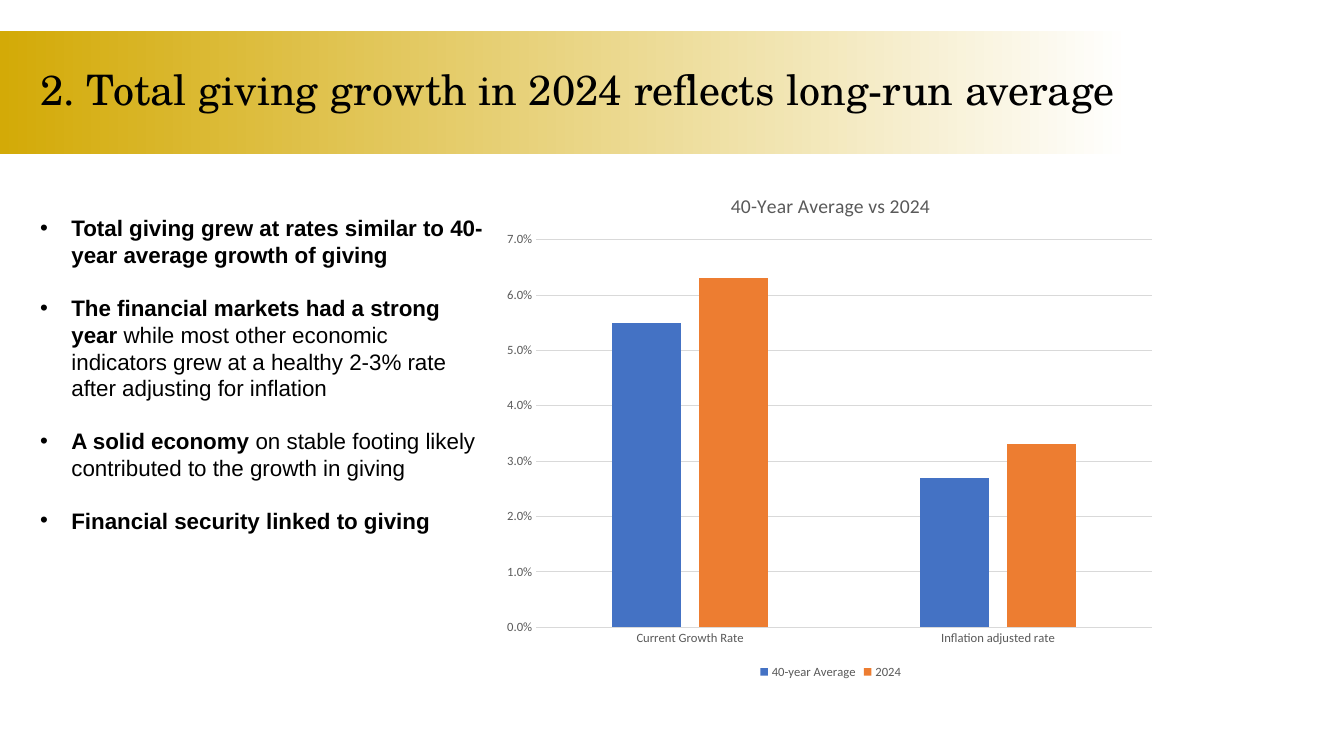
from dataclasses import dataclass

from lxml.etree import SubElement
from pptx import Presentation
from pptx.chart.data import CategoryChartData
from pptx.dml.color import RGBColor
from pptx.enum.chart import XL_CHART_TYPE as ChartType
from pptx.enum.chart import XL_LEGEND_POSITION as LegendPos
from pptx.enum.chart import XL_TICK_MARK as TickMark
from pptx.enum.shapes import MSO_SHAPE as Shape
from pptx.enum.text import MSO_ANCHOR as Anchor
from pptx.enum.text import MSO_AUTO_SIZE as AutoSize
from pptx.enum.text import PP_ALIGN as Align
from pptx.oxml import parse_xml
from pptx.oxml.ns import nsdecls, qn
from pptx.util import Cm, Pt

BLACK = RGBColor(0x00, 0x00, 0x00)
WHITE = RGBColor(0xFF, 0xFF, 0xFF)
GOLD = RGBColor(0xD3, 0xAA, 0x07)
GREY = RGBColor(0x59, 0x59, 0x59)
RULE = RGBColor(0xD9, 0xD9, 0xD9)
BLUE = RGBColor(0x44, 0x72, 0xC4)
ORANGE = RGBColor(0xED, 0x7D, 0x31)


@dataclass
class Point:
    strong: str
    plain: str = ""


@dataclass
class Growth:
    name: str
    values: tuple[float, float]
    color: RGBColor


POINTS = [
    Point("Total giving grew at rates similar to 40-year average growth of giving"),
    Point("The financial markets had a strong year ",
          "while most other economic indicators grew at a healthy 2-3% rate "
          "after adjusting for inflation"),
    Point("A solid economy ",
          "on stable footing likely contributed to the growth in giving"),
    Point("Financial security linked to giving"),
]
RATES = ["Current Growth Rate", "Inflation adjusted rate"]
SERIES = [
    Growth("40-year Average", (0.055, 0.027), BLUE),
    Growth("2024", (0.063, 0.033), ORANGE),
]


def style(font, name: str, size: float, color: RGBColor, bold: bool = False) -> None:
    font.name, font.size, font.bold = name, Pt(size), bold
    font.color.rgb = color


def add_title(s) -> None:
    title = s.shapes.title
    title.left, title.top, title.width, title.height = Cm(0.76), Cm(1.22), Cm(29.21), Cm(2.18)
    tf = title.text_frame
    tf.text = "2. Total giving growth in 2024 reflects long-run average"
    tf.auto_size = AutoSize.NONE
    tf.vertical_anchor = Anchor.MIDDLE
    p = tf.paragraphs[0]
    p.alignment = Align.LEFT
    p.line_spacing = 0.9
    style(p.runs[0].font, "TeX Gyre Schola", 30, BLACK)

    # Gold band behind the title
    band = s.shapes.add_shape(Shape.RECTANGLE, 0, Cm(0.79), Cm(29.06), Cm(3.1))
    band.shadow.inherit = False
    band.line.fill.background()
    band.fill.gradient()
    band.fill.gradient_angle = 0
    for stop, color, position in zip(band.fill.gradient_stops, (GOLD, WHITE), (0, 0.98)):
        stop.color.rgb = color
        stop.position = position
    title.element.addprevious(band.element)


def add_points(s, points: list[Point]) -> None:
    tf = s.shapes.add_textbox(Cm(0.76), Cm(5.28), Cm(11.73), Cm(8.46)).text_frame
    tf.word_wrap = True
    for i, point in enumerate(points):
        p = tf.add_paragraph() if i else tf.paragraphs[0]
        pPr = p._p.get_or_add_pPr()
        pPr.set("marL", str(Cm(0.79)))
        pPr.set("indent", str(-Cm(0.79)))
        SubElement(pPr, qn("a:buFont"), typeface="Arial")
        SubElement(pPr, qn("a:buChar"), char="•")
        if i:
            p.space_before = Pt(18.4)
        for text, bold in ((point.strong, True), (point.plain, False)):
            if text:
                r = p.add_run()
                r.text = text
                style(r.font, "Arial", 16, BLACK, bold)


def add_growth_chart(s) -> None:
    data = CategoryChartData(number_format="0.0%")
    data.categories = RATES
    for growth in SERIES:
        data.add_series(growth.name, growth.values)
    chart = s.shapes.add_chart(ChartType.COLUMN_CLUSTERED, Cm(12.5), Cm(4.37),
                               Cm(16.87), Cm(12.85), data).chart
    style(chart.font, "Calibri", 10, BLACK)

    # Title and legend
    chart.has_title = True
    tf = chart.chart_title.text_frame
    tf.text = "40-Year Average vs 2024"
    style(tf.paragraphs[0].runs[0].font, "Calibri", 14, GREY)
    chart.chart_title.include_in_layout = False
    chart.has_legend = True
    chart.legend.position = LegendPos.BOTTOM
    chart.legend.include_in_layout = False
    style(chart.legend.font, "Calibri", 9, GREY)

    # Axes
    cat_axis, val_axis = chart.category_axis, chart.value_axis
    for axis in (cat_axis, val_axis):
        axis.major_tick_mark = axis.minor_tick_mark = TickMark.NONE
        style(axis.tick_labels.font, "Calibri", 9, GREY)
    val_axis.minimum_scale, val_axis.maximum_scale, val_axis.major_unit = 0, 0.07, 0.01
    val_axis.tick_labels.number_format = "0.0%"
    val_axis.tick_labels.number_format_is_linked = False
    val_axis.format.line.fill.background()
    for line in (cat_axis.format.line, val_axis.major_gridlines.format.line):
        line.color.rgb = RULE
        line.width = Pt(0.75)

    # Columns
    plot = chart.plots[0]
    plot.vary_by_categories = False
    plot.gap_width, plot.overlap = 219, -27
    for series, growth in zip(plot.series, SERIES):
        series.format.fill.solid()
        series.format.fill.fore_color.rgb = growth.color

    # Plot area as shares of the chart frame
    area = chart.element.find(".//" + qn("c:plotArea"))
    for layout in area.findall(qn("c:layout")):
        area.remove(layout)
    area.insert(0, parse_xml(
        f'<c:layout {nsdecls("c")}><c:manualLayout><c:layoutTarget val="inner"/>'
        '<c:xMode val="edge"/><c:yMode val="edge"/><c:x val="0.06"/><c:y val="0.13"/>'
        '<c:w val="0.92"/><c:h val="0.76"/></c:manualLayout></c:layout>'))


def main() -> None:
    prs = Presentation()
    prs.slide_width, prs.slide_height = Cm(33.87), Cm(19.05)
    s = prs.slides.add_slide(prs.slide_layouts[5])
    add_title(s)
    add_points(s, POINTS)
    add_growth_chart(s)
    prs.save("out.pptx")


if __name__ == "__main__":
    main()
